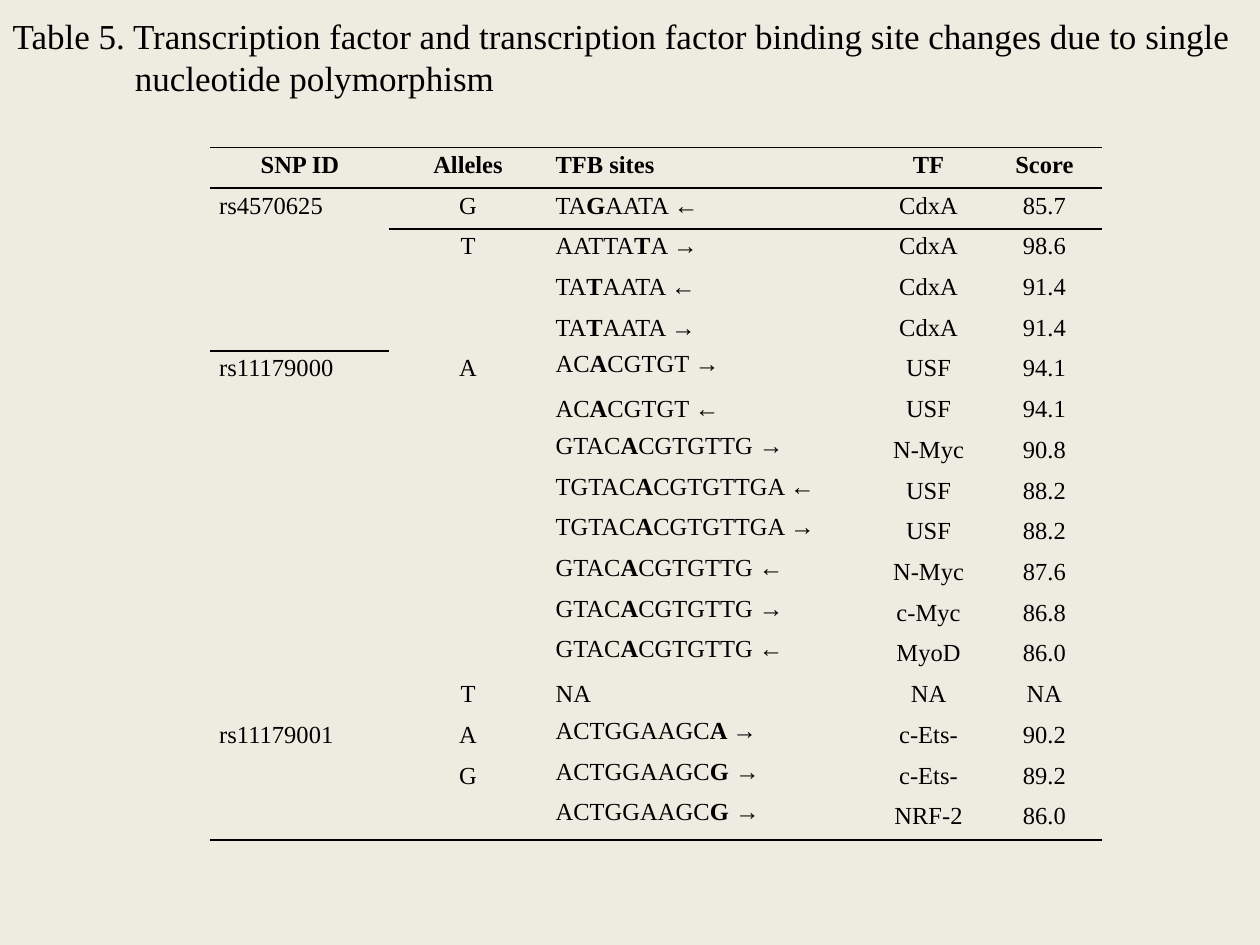
from dataclasses import dataclass

from lxml import etree
from pptx import Presentation
from pptx import util as u
from pptx.dml.color import RGBColor
from pptx.enum import text
from pptx.oxml.ns import qn


@dataclass(frozen=True)
class Theme:
    font: str = "Times New Roman"
    ink: str = "000000"
    paper: str = "EEECE1"
    title_size: int = 20
    table_size: int = 14
    rule_width: int = 1
    plain_table: str = "{2D5ABB26-0587-4C30-8999-92F81FD0307C}"


THEME = Theme()
ALIGN = text.PP_ALIGN

TITLE_LINES = [
    "Table 5. Transcription factor and transcription factor binding site changes due to single",
    "nucleotide polymorphism",
]
HEADINGS = ["SNP ID", "Alleles", "TFB sites", "TF", "Score"]
COLUMN_WIDTHS = [1.42, 1.25, 2.57, 0.92, 0.92]
ALIGNMENTS = [ALIGN.LEFT, ALIGN.CENTER, ALIGN.JUSTIFY, ALIGN.CENTER, ALIGN.CENTER]
SITE_COLUMN = 2
LOOSE, TIGHT = 1.15, 1.0

# SNP -> allele -> (site with *variant base*, factor, score, line spacing of the site)
SNPS = {
    "rs4570625": {
        "G": [("TA*G*AATA ←", "CdxA", "85.7", LOOSE)],
        "T": [
            ("AATTA*T*A →", "CdxA", "98.6", LOOSE),
            ("TA*T*AATA ←", "CdxA", "91.4", LOOSE),
            ("TA*T*AATA →", "CdxA", "91.4", LOOSE),
        ],
    },
    "rs11179000": {
        "A": [
            ("AC*A*CGTGT →", "USF", "94.1", TIGHT),
            ("AC*A*CGTGT ←", "USF", "94.1", LOOSE),
            ("GTAC*A*CGTGTTG →", "N-Myc", "90.8", TIGHT),
            ("TGTAC*A*CGTGTTGA ←", "USF", "88.2", TIGHT),
            ("TGTAC*A*CGTGTTGA →", "USF", "88.2", TIGHT),
            ("GTAC*A*CGTGTTG ←", "N-Myc", "87.6", TIGHT),
            ("GTAC*A*CGTGTTG →", "c-Myc", "86.8", TIGHT),
            ("GTAC*A*CGTGTTG ←", "MyoD", "86.0", TIGHT),
        ],
        "T": [("NA", "NA", "NA", LOOSE)],
    },
    "rs11179001": {
        "A": [("ACTGGAAGC*A *→", "c-Ets-", "90.2", TIGHT)],
        "G": [
            ("ACTGGAAGC*G *→", "c-Ets-", "89.2", TIGHT),
            ("ACTGGAAGC*G *→", "NRF-2", "86.0", TIGHT),
        ],
    },
}


def style_font(font, size):
    font.name, font.size = THEME.font, u.Pt(size)
    font.color.rgb = RGBColor.from_string(THEME.ink)


def add_title(page, left, top, width, height):
    title = page.shapes.title
    title.left, title.top, title.width, title.height = map(u.Inches, (left, top, width, height))
    frame = title.text_frame
    frame.word_wrap = True
    frame.auto_size = text.MSO_AUTO_SIZE.NONE
    frame.vertical_anchor = text.MSO_ANCHOR.MIDDLE
    frame.text = "\n".join(TITLE_LINES)
    for para in frame.paragraphs:
        para.alignment = ALIGN.JUSTIFY
        style_font(para.font, THEME.title_size)
    continuation = frame.paragraphs[1]
    continuation.font.size = u.Pt(THEME.title_size)
    continuation._p.get_or_add_pPr().set("marL", str(u.Inches(0.97)))


def write_cell(cell, content, alignment, spacing=LOOSE, bold=False):
    """Write content, with the parts between asterisks in bold."""
    cell.fill.background()
    cell.margin_left = cell.margin_right = u.Inches(0.07)
    cell.margin_top = cell.margin_bottom = 0
    para = cell.text_frame.paragraphs[0]
    para.alignment, para.line_spacing = alignment, spacing
    style_font(para.font, THEME.table_size)
    para.font.bold = bold
    for index, part in enumerate(content.split("*")):
        if part:
            span = para.add_run()
            span.text = part
            if index % 2:
                span.font.bold = True


def add_rules(cell, *sides):
    """Draw cell borders; sides are T and B, in that order."""
    properties = cell._tc.get_or_add_tcPr()
    for index, side in enumerate(sides):
        line = etree.Element(qn(f"a:ln{side}"), w=str(u.Pt(THEME.rule_width)))
        fill = etree.SubElement(line, qn("a:solidFill"))
        etree.SubElement(fill, qn("a:srgbClr"), val=THEME.ink)
        properties.insert(index, line)


def table_rows():
    """Yield SNP, allele, site, factor, score and site spacing, labels on first rows only."""
    for snp, alleles in SNPS.items():
        for allele, sites in alleles.items():
            for index, site in enumerate(sites):
                yield (snp, allele if index == 0 else "", *site)
                snp = ""


def merge_labels(table):
    """Join each SNP and allele label with the rows it covers."""
    first = 1
    for alleles in SNPS.values():
        start = first
        for sites in alleles.values():
            last = first + len(sites) - 1
            if last > first:
                table.cell(first, 1).merge(table.cell(last, 1))
            first = last + 1
        table.cell(start, 0).merge(table.cell(first - 1, 0))


def add_snp_table(page, left, top, width, height):
    rows = list(table_rows())
    count = len(rows) + 1
    frame = page.shapes.add_table(count, len(HEADINGS), *map(u.Inches, (left, top, width, height)))
    table = frame.table
    table.first_row = table.horz_banding = False
    table._tbl.tblPr.find(qn("a:tableStyleId")).text = THEME.plain_table
    for column, share in zip(table.columns, COLUMN_WIDTHS):
        column.width = u.Inches(width * share / sum(COLUMN_WIDTHS))
    for row in table.rows:
        row.height = u.Inches(height / count)

    for column, heading in enumerate(HEADINGS):
        alignment = ALIGNMENTS[column] if column == SITE_COLUMN else ALIGN.CENTER
        write_cell(table.cell(0, column), heading, alignment, bold=True)
        add_rules(table.cell(0, column), "T", "B")
    for index, (*values, site_spacing) in enumerate(rows, start=1):
        for column, value in enumerate(values):
            spacing = site_spacing if column == SITE_COLUMN else LOOSE
            alignment = ALIGN.LEFT if spacing == TIGHT else ALIGNMENTS[column]
            write_cell(table.cell(index, column), value, alignment, spacing)

    merge_labels(table)
    for column in range(len(HEADINGS)):
        add_rules(table.cell(1, column), "T")
        for index in range(1, count):
            cell = table.cell(index, column)
            if index + cell.span_height == count or index == count - 1:
                add_rules(cell, "B")


def main():
    deck = Presentation()
    deck.slide_width, deck.slide_height = u.Inches(10), u.Inches(7.5)
    page = deck.slides.add_slide(deck.slide_layouts[5])
    page.background.fill.solid()
    page.background.fill.fore_color.rgb = RGBColor.from_string(THEME.paper)
    add_title(page, 0, 0.06, 9.99, 0.77)
    add_snp_table(page, 1.67, 1.17, 7.08, 5.5)
    deck.save("out.pptx")


if __name__ == "__main__":
    main()
